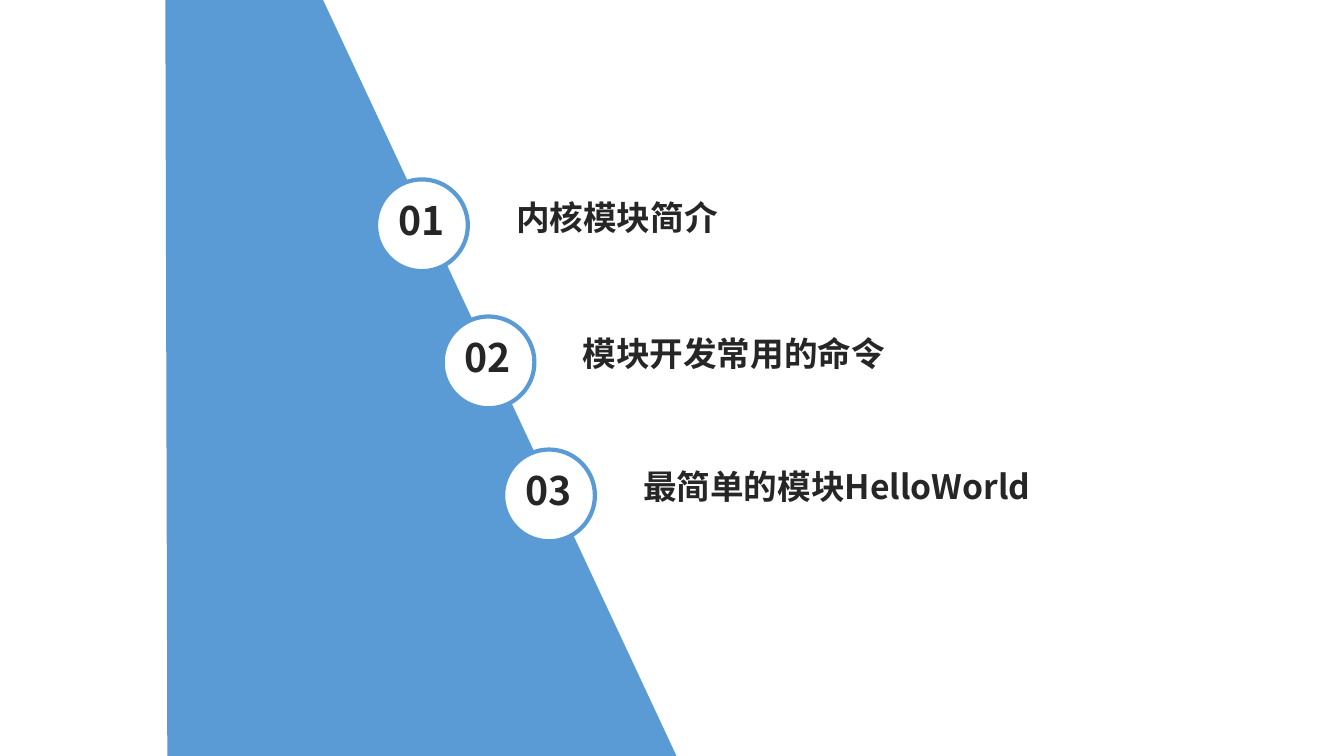
from lxml.etree import SubElement
from pptx import Presentation
from pptx.dml.color import RGBColor
from pptx.enum.shapes import MSO_SHAPE as SHAPE
from pptx.enum.text import MSO_AUTO_SIZE as AUTO, PP_ALIGN as ALIGN
from pptx.oxml.ns import qn
from pptx.util import Inches, Pt

COLORS = {"blue": "5B9BD5", "white": "FFFFFF", "ink": "262626"}
FONT = "Noto Sans CJK SC"
BADGE = 0.91
CHAPTERS = [
    ("01", "内核模块简介", 3.73, 1.78, 1.95, 6.11),
    ("02", "模块开发常用的命令", 4.39, 3.14, 3.3, 5.47),
    ("03", "最简单的模块HelloWorld", 4.99, 4.46, 4.62, 5.47),
]


def rgb(name):
    return RGBColor.from_string(COLORS[name])


def add_panel(s):
    fb = s.shapes.build_freeform(Inches(6.71), Inches(7.5), scale=1.0)
    corners = [(3.2, -0.01), (1.64, -0.01), (1.66, 7.54)]
    fb.add_line_segments([(Inches(x), Inches(y)) for x, y in corners])
    sp = fb.convert_to_shape()
    sp.shadow.inherit = False
    sp.fill.solid()
    sp.fill.fore_color.rgb = rgb("blue")
    sp.line.fill.background()


def add_badge(s, left, top):
    sp = s.shapes.add_shape(SHAPE.OVAL, Inches(left), Inches(top), Inches(BADGE), Inches(BADGE))
    sp.shadow.inherit = False
    sp.fill.solid()
    sp.fill.fore_color.rgb = rgb("white")
    sp.line.color.rgb = rgb("blue")
    sp.line.width = Pt(3)


def add_label(s, text, left, top, width, height, size, align=ALIGN.LEFT):
    sp = s.shapes.add_textbox(Inches(left), Inches(top), Inches(width), Inches(height))
    tf = sp.text_frame
    tf.word_wrap = True
    tf.auto_size = AUTO.SHAPE_TO_FIT_TEXT
    tf.margin_top = tf.margin_bottom = 0
    p = tf.paragraphs[0]
    p.alignment = align
    r = p.add_run()
    r.text = text
    r.font.size = Pt(size)
    r.font.bold = True
    r.font.name = FONT
    r.font.color.rgb = rgb("ink")
    SubElement(r.font._element, qn("a:ea")).set("typeface", FONT)


def main():
    prs = Presentation()
    prs.slide_width, prs.slide_height = Inches(13.33), Inches(7.5)
    s = prs.slides.add_slide(prs.slide_layouts[6])
    add_panel(s)
    for number, title, left, top, title_top, title_width in CHAPTERS:
        add_badge(s, left, top)
        add_label(s, number, left + 0.08, top + 0.17, 0.74, 0.6, 28, ALIGN.CENTER)
        add_label(s, title, left + 1.29, title_top, title_width, 0.5, 24)
    prs.save("out.pptx")


if __name__ == "__main__":
    main()
